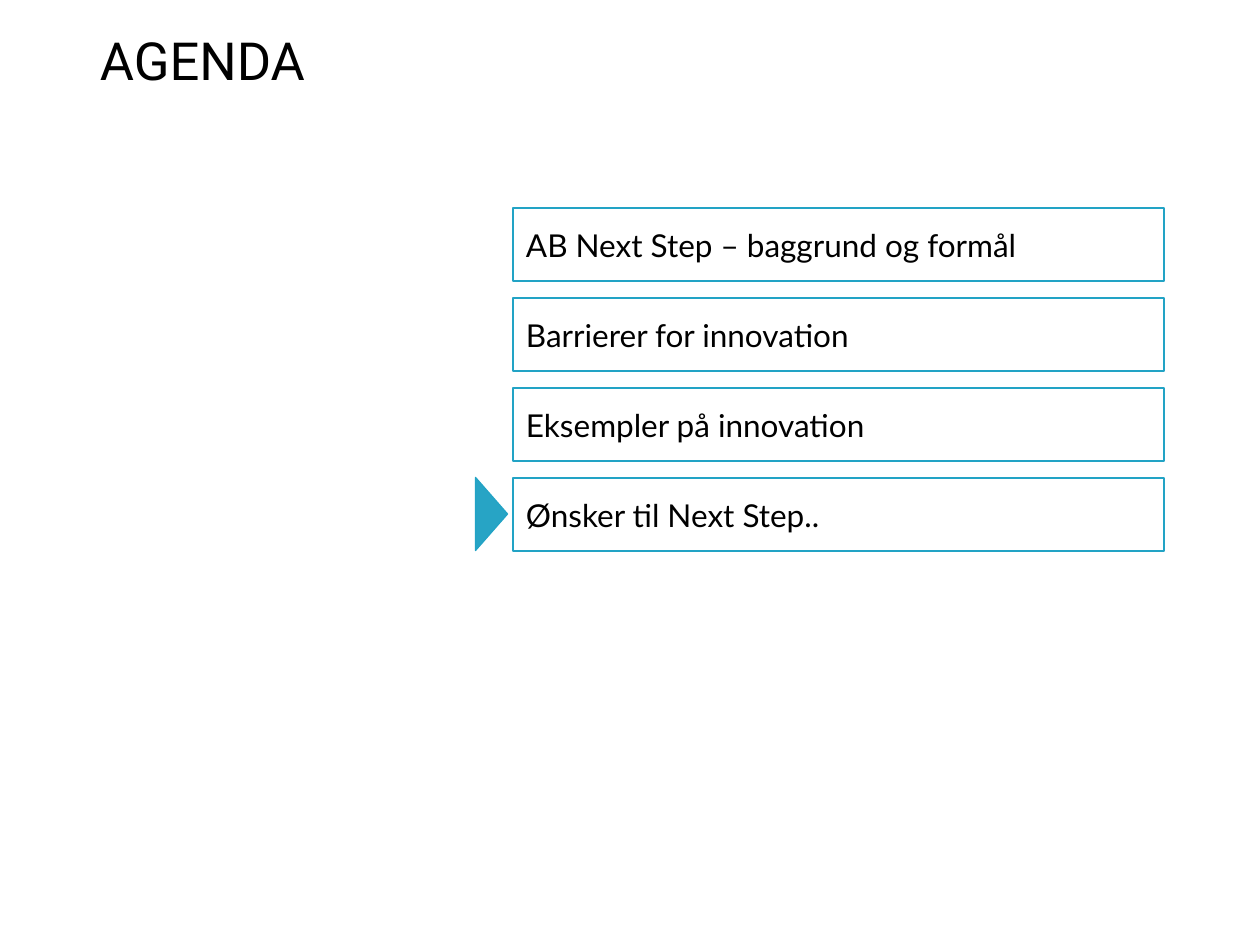
from pptx import Presentation
from pptx.dml.color import RGBColor
from pptx.enum.shapes import MSO_SHAPE
from pptx.enum.text import MSO_ANCHOR, PP_ALIGN
from pptx.util import Emu, Pt


def px(n):
    return Emu(round(n * 914400 / 126))


def color(code):
    return RGBColor.from_string(code)


def write(frame, text, font="Lato", size=18, ink="000000", anchor=MSO_ANCHOR.MIDDLE,
          inset=(13, 6, 13, 6), spacing=None):
    frame.word_wrap = True
    frame.vertical_anchor = anchor
    (frame.margin_left, frame.margin_top,
     frame.margin_right, frame.margin_bottom) = map(px, inset)
    para = frame.paragraphs[0]
    para.alignment = PP_ALIGN.LEFT
    if spacing:
        para.line_spacing = Pt(spacing)
    run = para.add_run()
    run.text = text
    run.font.name = font
    run.font.size = Pt(size)
    run.font.color.rgb = color(ink)


class Agenda:
    """Holds the agenda style and draws its elements on the current slide."""

    edge = "22A3C5"
    accent = "27A4C5"

    def __init__(self, slide):
        self.shapes = slide.shapes

    def title(self, text, *area):
        box = self.shapes.add_textbox(*map(px, area))
        write(box.text_frame, text, font="Roboto", size=30, spacing=30,
              anchor=MSO_ANCHOR.TOP, inset=(0, 5, 0, 0))

    def shape(self, kind, area, fill=None):
        item = self.shapes.add_shape(kind, *map(px, area))
        item.shadow.inherit = False
        item.line.color.rgb = color(self.edge)
        item.line.width = Pt(0.75)
        if fill:
            item.fill.solid()
            item.fill.fore_color.rgb = color(fill)
        else:
            item.fill.background()
        return item

    def topic(self, text, *area):
        write(self.shape(MSO_SHAPE.RECTANGLE, area).text_frame, text)

    def marker(self, *area):
        self.shape(MSO_SHAPE.ISOSCELES_TRIANGLE, area, self.accent).rotation = 90


def main():
    deck = Presentation()
    deck.slide_width, deck.slide_height = px(1260), px(945)
    page = Agenda(deck.slides.add_slide(deck.slide_layouts[6]))
    page.title("AGENDA", 100, 34, 868, 169)

    topics = ["AB Next Step – baggrund og formål", "Barrierer for innovation",
              "Eksempler på innovation", "Ønsker til Next Step.."]
    left, top, width, height, pitch = 513, 208, 651, 73, 90
    for row, text in enumerate(topics):
        page.topic(text, left, top + row * pitch, width, height)

    current, depth = 3, 32
    middle = top + current * pitch + height / 2
    page.marker(455, round(middle - depth / 2), height, depth)
    deck.save("out.pptx")


if __name__ == "__main__":
    main()
